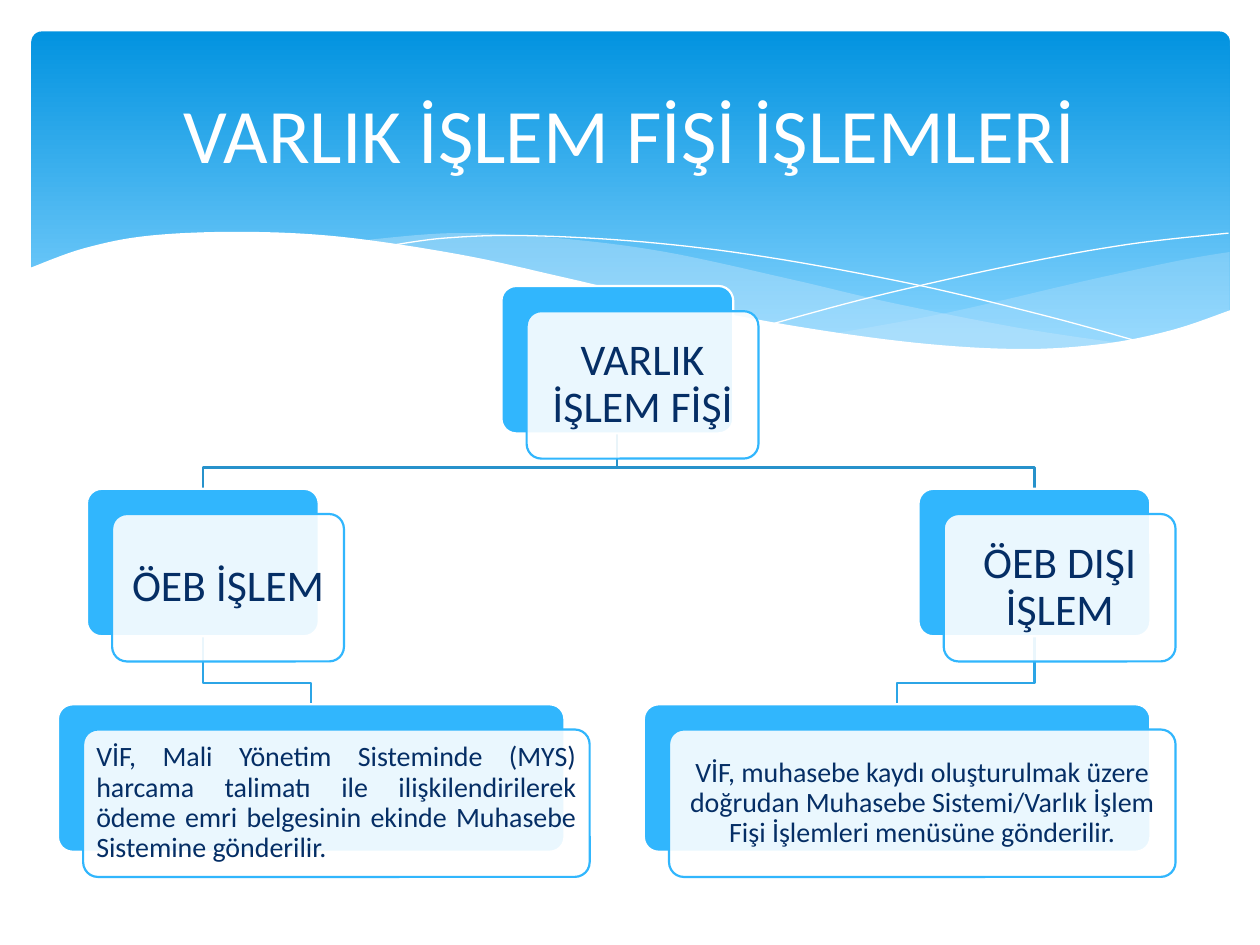
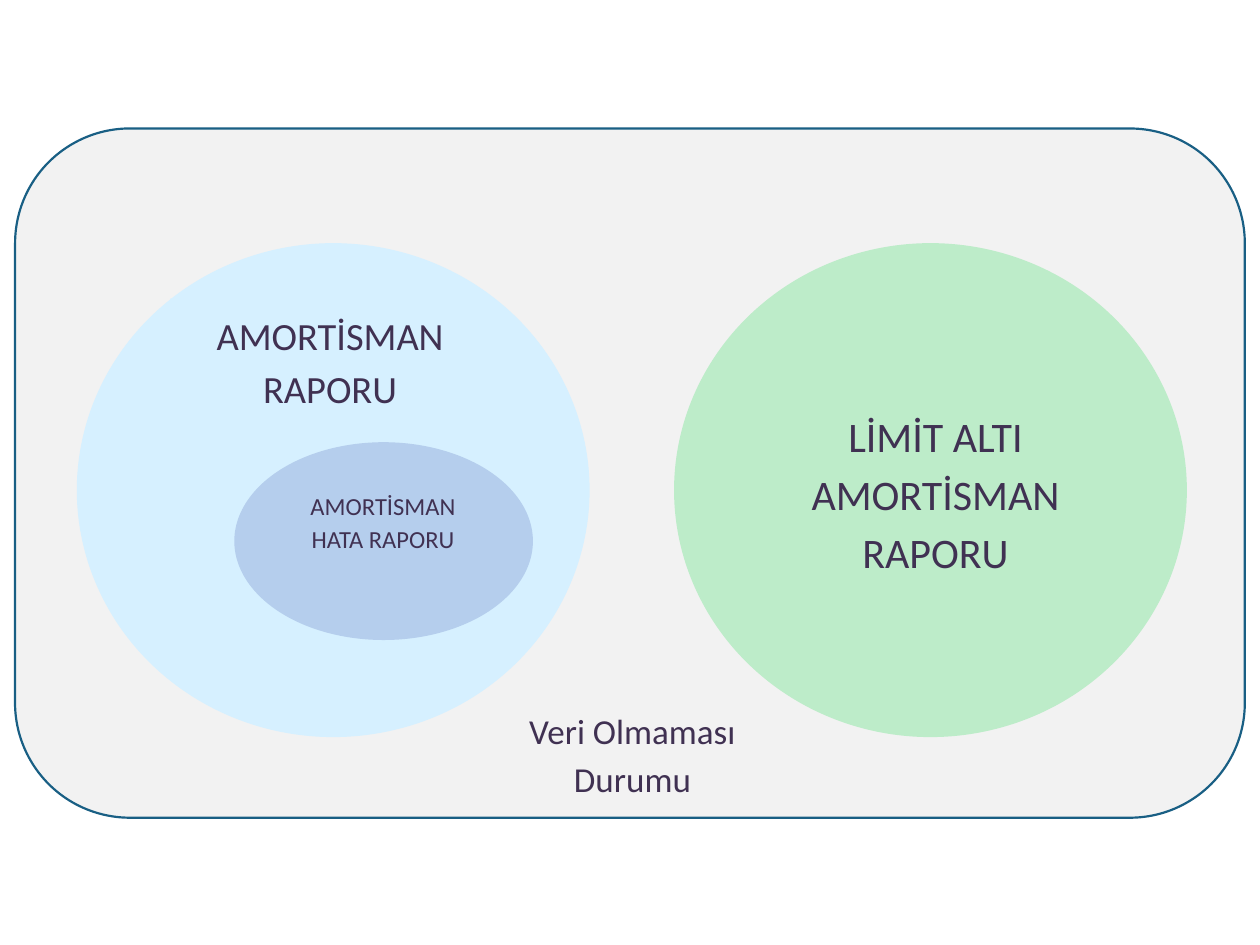
from dataclasses import dataclass

from lxml import etree
from pptx import Presentation
from pptx.dml.color import RGBColor
from pptx.enum.shapes import MSO_SHAPE as Shape
from pptx.enum.text import MSO_ANCHOR as Anchor, PP_ALIGN as Align
from pptx.oxml.ns import qn
from pptx.util import Inches, Pt

FONT = "Calibri"
WHITE = RGBColor(0xFF, 0xFF, 0xFF)
BAND_TOP = RGBColor(0x02, 0x93, 0xE0)
BAND_BOTTOM = RGBColor(0x83, 0xD3, 0xFE)
WAVE = RGBColor(0xC6, 0xE7, 0xFC)
NODE_BLUE = RGBColor(0x31, 0xB6, 0xFD)
NODE_TEXT = RGBColor(0x05, 0x2E, 0x65)
UPPER_BRANCH = RGBColor(0x27, 0x92, 0xCB)
LOWER_BRANCH = RGBColor(0x2C, 0xA5, 0xE6)
FRAME_FILL = RGBColor(0xF2, 0xF2, 0xF2)
FRAME_LINE = RGBColor(0x19, 0x5F, 0x84)
PALE_BLUE = RGBColor(0xD6, 0xF0, 0xFF)
PALE_GREEN = RGBColor(0xBD, 0xEC, 0xC9)
MID_BLUE = RGBColor(0xB5, 0xCE, 0xED)
SET_TEXT = RGBColor(0x40, 0x31, 0x52)

LINE_WIDTH = 1.25
NODE_HEIGHT = 1.17
CARD_OFFSET = 0.2
BRANCH_DROP = 0.17

# Each wave is a list of smooth edges, joined by straight lines.
RIGHT_WAVE = [
    [(9.76, 2), (9.35, 2.07), (8.61, 2.23), (7.53, 2.48), (6.61, 2.65)],
    [(6.61, 2.65), (7.19, 2.72), (8.03, 2.78), (8.63, 2.75), (9.21, 2.65), (9.76, 2.47)],
]
MIDDLE_WAVE = [
    [(8.93, 2.73), (8.07, 2.6), (7.06, 2.4), (6.29, 2.22), (5.28, 2), (4.42, 1.89),
     (3.61, 1.85), (2.86, 1.91)],
    [(2.86, 1.91), (3.62, 2.03), (4.49, 2.22), (5.66, 2.48), (6.5, 2.64), (7.36, 2.75),
     (8.18, 2.78), (8.93, 2.73)],
]
FALLING_LINE = [[(3.09, 1.95), (3.53, 1.89), (4.16, 1.87), (5.1, 1.92), (6.08, 2.04),
                 (7.27, 2.26), (8.31, 2.51), (9.07, 2.72)]]
RISING_LINE = [[(6.13, 2.57), (6.95, 2.35), (8.06, 2.1), (8.95, 1.94), (9.75, 1.85)]]
WHITE_FOOT = [
    [(9.77, 2.46), (9.3, 2.62), (8.75, 2.73), (8.09, 2.77), (7.26, 2.72), (6.26, 2.58),
     (5.29, 2.39), (4.47, 2.2), (3.65, 2.02), (2.71, 1.88), (1.93, 1.84), (1.19, 1.87),
     (0.67, 1.97), (0.23, 2.13)],
    [(0.23, 3.29), (9.77, 3.29)],
]


@dataclass
class Node:
    left: float
    top: float
    width: float
    text: str
    size: int = 25
    inset: float = 0.1
    align: Align = Align.CENTER

    @property
    def center(self):
        return self.left + self.width / 2


def smooth(points, steps=8):
    """Return points of a Catmull-Rom curve through the given points."""
    padded = [points[0], *points, points[-1]]
    curve = [points[0]]
    for a, b, c, d in zip(padded, padded[1:], padded[2:], padded[3:]):
        for step in range(1, steps + 1):
            t = step / steps
            curve.append(tuple(
                (2 * q + (r - p) * t + (2 * p - 5 * q + 4 * r - s) * t**2
                 + (3 * q - p - 3 * r + s) * t**3) / 2
                for p, q, r, s in zip(a, b, c, d)))
    return curve


def style(shape, fill=None, opacity=100, line=None, width=LINE_WIDTH):
    shape.shadow.inherit = False
    if fill is None:
        shape.fill.background()
    else:
        shape.fill.solid()
        shape.fill.fore_color.rgb = fill
        if opacity < 100:
            color = shape._element.spPr.find(qn("a:solidFill"))[0]
            etree.SubElement(color, qn("a:alpha"), val=str(opacity * 1000))
    if line is None:
        shape.line.fill.background()
    else:
        shape.line.color.rgb = line
        shape.line.width = Pt(width)


def add_box(slide, kind, left, top, width, height, **look):
    shape = slide.shapes.add_shape(
        kind, Inches(left), Inches(top), Inches(width), Inches(height))
    style(shape, **look)
    return shape


def add_outline(slide, points, close=False, **look):
    start, *others = [(Inches(x), Inches(y)) for x, y in points]
    builder = slide.shapes.build_freeform(*start)
    builder.add_line_segments(others, close=close)
    style(builder.convert_to_shape(), **look)


def add_wave(slide, edges, **look):
    points = [point for edge in edges for point in smooth(edge)]
    add_outline(slide, points, **look)


def write(shape, text, size, color, align=Align.CENTER, anchor=Anchor.MIDDLE,
          spacing=None, inset=None):
    frame = shape.text_frame
    frame.word_wrap = True
    frame.vertical_anchor = anchor
    if inset is not None:
        frame.margin_left = frame.margin_right = Inches(inset)
        frame.margin_top = frame.margin_bottom = Inches(inset)
    paragraph = frame.paragraphs[0]
    paragraph.alignment = align
    paragraph.line_spacing = spacing
    run = paragraph.add_run()
    run.text = text
    run.font.name = FONT
    run.font.size = Pt(size)
    run.font.color.rgb = color


def add_title_band(slide, text):
    band = add_box(slide, Shape.ROUNDED_RECTANGLE, 0.25, 0.25, 9.51, 2.7)
    band.adjustments[0] = 0.03
    band.fill.gradient()
    band.fill.gradient_angle = 270
    for stop, position, color in zip(
            band.fill.gradient_stops, (0, 0.9), (BAND_TOP, BAND_BOTTOM)):
        stop.position = position
        stop.color.rgb = color
    add_wave(slide, RIGHT_WAVE, close=True, fill=WAVE, opacity=29)
    add_wave(slide, MIDDLE_WAVE, close=True, fill=WAVE, opacity=40)
    for edges in (FALLING_LINE, RISING_LINE):
        add_wave(slide, edges, line=WHITE, width=0)
    add_wave(slide, WHITE_FOOT, close=True, fill=WHITE)

    title = slide.shapes.title
    title.left, title.top = Inches(0.5), Inches(0.37)
    title.width, title.height = Inches(9), Inches(1.37)
    write(title, text, 44, WHITE)
    slide.shapes._spTree.append(title._element)  # bring in front of the band


def add_branch(slide, parent, child, color):
    bend = child.top - BRANCH_DROP
    add_outline(slide, [(parent.center, parent.top + NODE_HEIGHT), (parent.center, bend),
                        (child.center, bend), (child.center, child.top)], line=color)


def add_node(slide, node):
    """Add a blue plate with a translucent text card shifted over it."""
    plate = add_box(slide, Shape.ROUNDED_RECTANGLE, node.left, node.top,
                    node.width, NODE_HEIGHT, fill=NODE_BLUE, line=WHITE)
    card = add_box(slide, Shape.ROUNDED_RECTANGLE, node.left + CARD_OFFSET,
                   node.top + CARD_OFFSET, node.width, NODE_HEIGHT,
                   fill=WHITE, opacity=90, line=NODE_BLUE)
    for shape in (plate, card):
        shape.adjustments[0] = 0.1
    write(card, node.text, node.size, NODE_TEXT, node.align, spacing=0.9, inset=node.inset)


def add_label(slide, left, top, width, height, fill, text, size):
    label = add_box(slide, Shape.RECTANGLE, left, top, width, height, fill=fill)
    write(label, text, size, SET_TEXT, anchor=Anchor.TOP, spacing=1.15)


def build_hierarchy(slide):
    add_title_band(slide, "VARLIK İŞLEM FİŞİ İŞLEMLERİ")
    root = Node(3.98, 2.27, 1.84, "VARLIK İŞLEM FİŞİ")
    inside = Node(0.69, 3.88, 1.84, "ÖEB İŞLEM")
    outside = Node(7.29, 3.88, 1.84, "ÖEB DIŞI İŞLEM")
    inside_detail = Node(
        0.46, 5.59, 4.02,
        "VİF, Mali Yönetim Sisteminde (MYS) harcama talimatı ile ilişkilendirilerek "
        "ödeme emri belgesinin ekinde Muhasebe Sistemine gönderilir.",
        16, 0.07, Align.JUSTIFY)
    outside_detail = Node(
        5.11, 5.59, 4.02,
        "VİF, muhasebe kaydı oluşturulmak üzere doğrudan Muhasebe Sistemi/Varlık İşlem "
        "Fişi İşlemleri menüsüne gönderilir.",
        16, 0.07)
    for parent, child, color in (
            (outside, outside_detail, LOWER_BRANCH), (root, outside, UPPER_BRANCH),
            (inside, inside_detail, LOWER_BRANCH), (root, inside, UPPER_BRANCH)):
        add_branch(slide, parent, child, color)
    for node in (root, inside, inside_detail, outside, outside_detail):
        add_node(slide, node)


def build_report_sets(slide):
    add_box(slide, Shape.ROUNDED_RECTANGLE, 0.12, 1.02, 9.76, 5.47,
            fill=FRAME_FILL, line=FRAME_LINE)
    for left, top, width, height, fill in (
            (0.61, 1.93, 4.07, 3.92, PALE_BLUE),
            (5.35, 1.93, 4.07, 3.92, PALE_GREEN),
            (1.86, 3.51, 2.37, 1.57, MID_BLUE)):
        add_box(slide, Shape.OVAL, left, top, width, height, fill=fill)
    add_label(slide, 1.35, 2.37, 2.54, 0.95, PALE_BLUE, "AMORTİSMAN RAPORU", 22)
    add_label(slide, 2.33, 3.81, 1.42, 0.98, MID_BLUE, "AMORTİSMAN HATA RAPORU", 14)
    add_label(slide, 6.17, 3.15, 2.51, 1.54, PALE_GREEN, "LİMİT ALTI AMORTİSMAN RAPORU", 24)
    add_label(slide, 3.94, 5.53, 2.16, 0.85, FRAME_FILL, "Veri Olmaması Durumu", 20)


def main():
    presentation = Presentation()
    presentation.slide_width, presentation.slide_height = Inches(10), Inches(7.5)
    title_only, blank = presentation.slide_layouts[5], presentation.slide_layouts[6]
    build_hierarchy(presentation.slides.add_slide(title_only))
    build_report_sets(presentation.slides.add_slide(blank))
    presentation.save("out.pptx")


if __name__ == "__main__":
    main()
